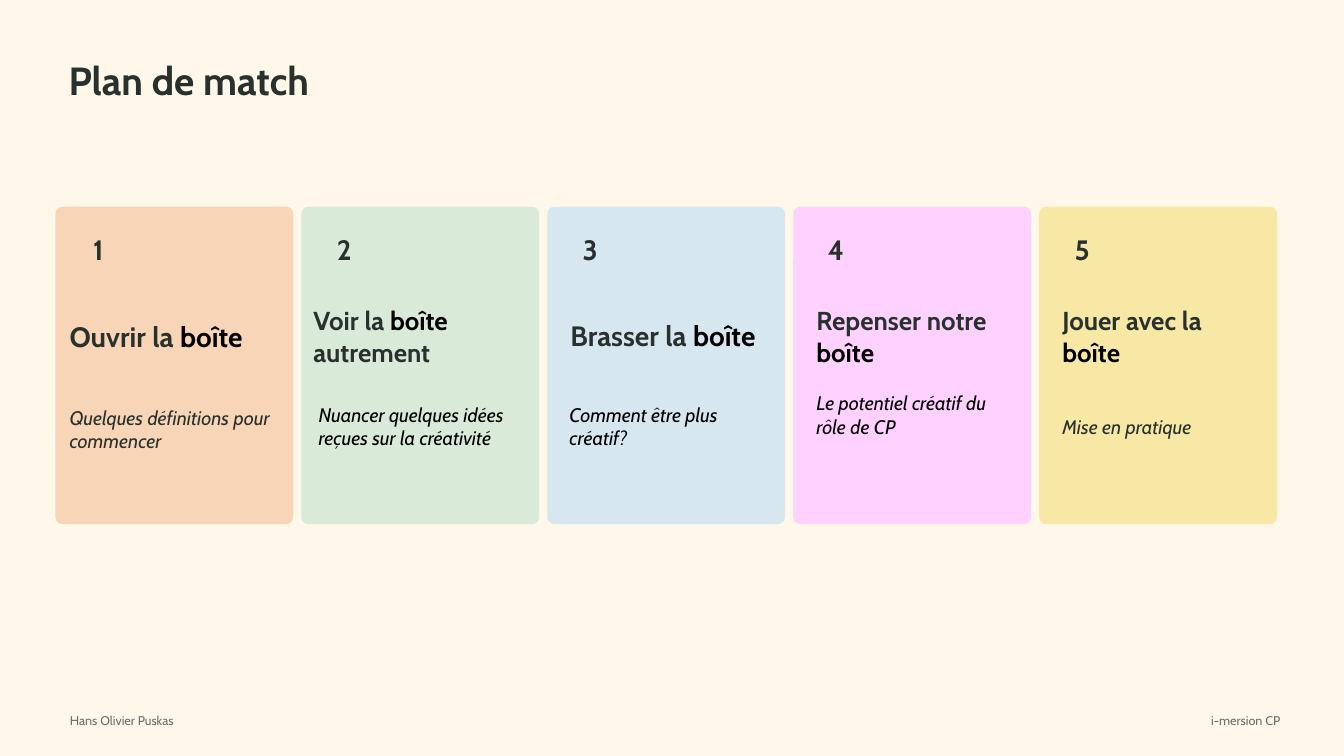
"""Build the five-step "Plan de match" agenda slide."""
from pptx import Presentation
from pptx.dml.color import RGBColor
from pptx.enum.shapes import MSO_SHAPE
from pptx.enum.text import MSO_ANCHOR, MSO_AUTO_SIZE, PP_ALIGN
from pptx.util import Pt

ROUNDED = MSO_SHAPE.ROUNDED_RECTANGLE
MIDDLE, TOP = MSO_ANCHOR.MIDDLE, MSO_ANCHOR.TOP
LEFT, CENTER, RIGHT = PP_ALIGN.LEFT, PP_ALIGN.CENTER, PP_ALIGN.RIGHT
NO_FIT = MSO_AUTO_SIZE.NONE

FONT = "Cabin"
COLORS = {
    "cream": "FFF7E9", "ink": "28312E", "black": "000000", "grey": "6E6E6E",
    "peach": "F8D5B7", "green": "D9EAD8", "blue": "D7E7F0",
    "pink": "FFD1FF", "yellow": "F8E8A6",
}
TITLE = "Plan de match"
# Heading and detail frames are (offset from card left, top, width).
STEPS = [
    {"fill": "peach", "size": 20,
     "heading": [("Ouvrir la ", "ink"), ("boîte", "black")],
     "heading_frame": (10.08, 220.32, 149.76),
     "detail": [("Quelques définitions pour commencer", "ink")],
     "detail_frame": (10.08, 274.32, 149.76)},
    {"fill": "green", "size": 18.5,
     "heading": [("Voir la ", "ink"), ("boîte ", "black"), ("autrement", "ink")],
     "heading_frame": (8.64, 220.32, 152.64),
     "detail": [("Nuancer quelques idées reçues sur la créativité", "black")],
     "detail_frame": (12.24, 272.16, 152.64)},
    {"fill": "blue", "size": 20,
     "heading": [("Brasser la ", "ink"), ("boîte", "black")],
     "heading_frame": (16.56, 219.6, 144),
     "detail": [("Comment être plus créatif?", "black")],
     "detail_frame": (15.84, 272.16, 136.8)},
    {"fill": "pink", "size": 18.5,
     "heading": [("Repenser notre ", "ink"), ("boîte", "black")],
     "heading_frame": (16.56, 220.32, 144),
     "detail": [("Le potentiel créatif du rôle de CP", "black")],
     "detail_frame": (16.56, 263.7, 136.8)},
    {"fill": "yellow", "size": 18.5,
     "heading": [("Jouer avec la ", "ink"), ("boîte", "black")],
     "heading_frame": (16.56, 220.32, 144),
     "detail": [("Mise en pratique", "ink")],
     "detail_frame": (16.56, 272.16, 136.8)},
]
FOOTERS = [
    ("Hans Olivier Puskas", (38.16, 505.44, 92.88, 18)),
    ("i-mersion CP", (856.08, 505.44, 65.52, 18)),
]
CARD_LEFT, CARD_TOP, CARD_WIDTH, CARD_HEIGHT, CARD_GAP = 39.6, 147.6, 169.92, 226.8, 5.76
NUMBER_INSET, NUMBER_SIZE = 14.4, 32.4
HEADING_HEIGHT, DETAIL_HEIGHT = 39.6, 64.8


def rgb(name):
    return RGBColor.from_string(COLORS[name])


def write(box, spans, size, bold=False, italic=False, align=LEFT):
    frame = box.text_frame
    frame.auto_size = NO_FIT
    frame.word_wrap = True
    frame.vertical_anchor = MIDDLE
    frame.margin_left = frame.margin_right = frame.margin_top = frame.margin_bottom = 0
    para = frame.paragraphs[0]
    para.alignment = align
    for text, color in spans:
        span = para.add_run()
        span.text = text
        span.font.name = FONT
        span.font.size = Pt(size)
        span.font.bold = bold
        span.font.italic = italic
        span.font.color.rgb = rgb(color)


def add_text(page, place, spans, size, **style):
    box = page.shapes.add_textbox(*map(Pt, place))
    write(box, spans, size, **style)
    return box


def add_step(page, index, step):
    left = CARD_LEFT + index * (CARD_WIDTH + CARD_GAP)
    card = page.shapes.add_shape(
        ROUNDED, Pt(left), Pt(CARD_TOP), Pt(CARD_WIDTH), Pt(CARD_HEIGHT))
    card.adjustments[0] = 0.03
    card.shadow.inherit = False
    card.fill.solid()
    card.fill.fore_color.rgb = rgb(step["fill"])
    card.line.fill.background()

    number_place = (left + NUMBER_INSET, CARD_TOP + NUMBER_INSET, NUMBER_SIZE, NUMBER_SIZE)
    add_text(page, number_place, [(str(index + 1), "ink")], 20, bold=True, align=CENTER)
    offset, top, width = step["heading_frame"]
    add_text(page, (left + offset, top, width, HEADING_HEIGHT),
             step["heading"], step["size"], bold=True)
    offset, top, width = step["detail_frame"]
    add_text(page, (left + offset, top, width, DETAIL_HEIGHT),
             step["detail"], 14, italic=True)


def add_footer(page, text, place):
    box = add_text(page, place, [(text, "grey")], 9, align=RIGHT)
    frame = box.text_frame
    frame.word_wrap = False
    frame.vertical_anchor = TOP
    frame.margin_left = frame.margin_right = Pt(7.2)
    frame.margin_top = frame.margin_bottom = Pt(3.6)


def main():
    deck = Presentation()
    deck.slide_width, deck.slide_height = Pt(960), Pt(540)
    page = deck.slides.add_slide(deck.slide_layouts[5])
    page.background.fill.solid()
    page.background.fill.fore_color.rgb = rgb("cream")

    title = page.shapes.title
    title.left, title.top, title.width, title.height = map(Pt, (48.96, 34.56, 558, 44.64))
    write(title, [(TITLE, "ink")], 28, bold=True)

    for index, step in enumerate(STEPS):
        add_step(page, index, step)
    for text, place in FOOTERS:
        add_footer(page, text, place)
    deck.save("out.pptx")


if __name__ == "__main__":
    main()
